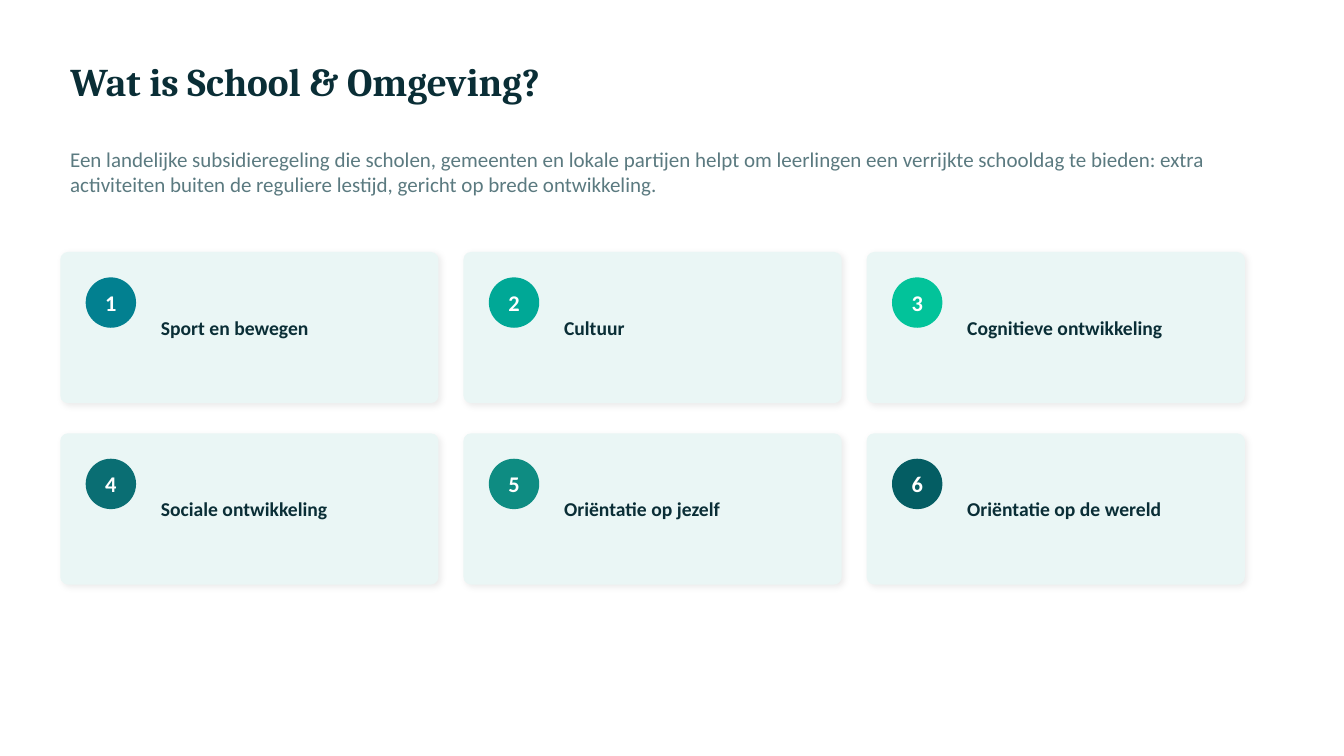
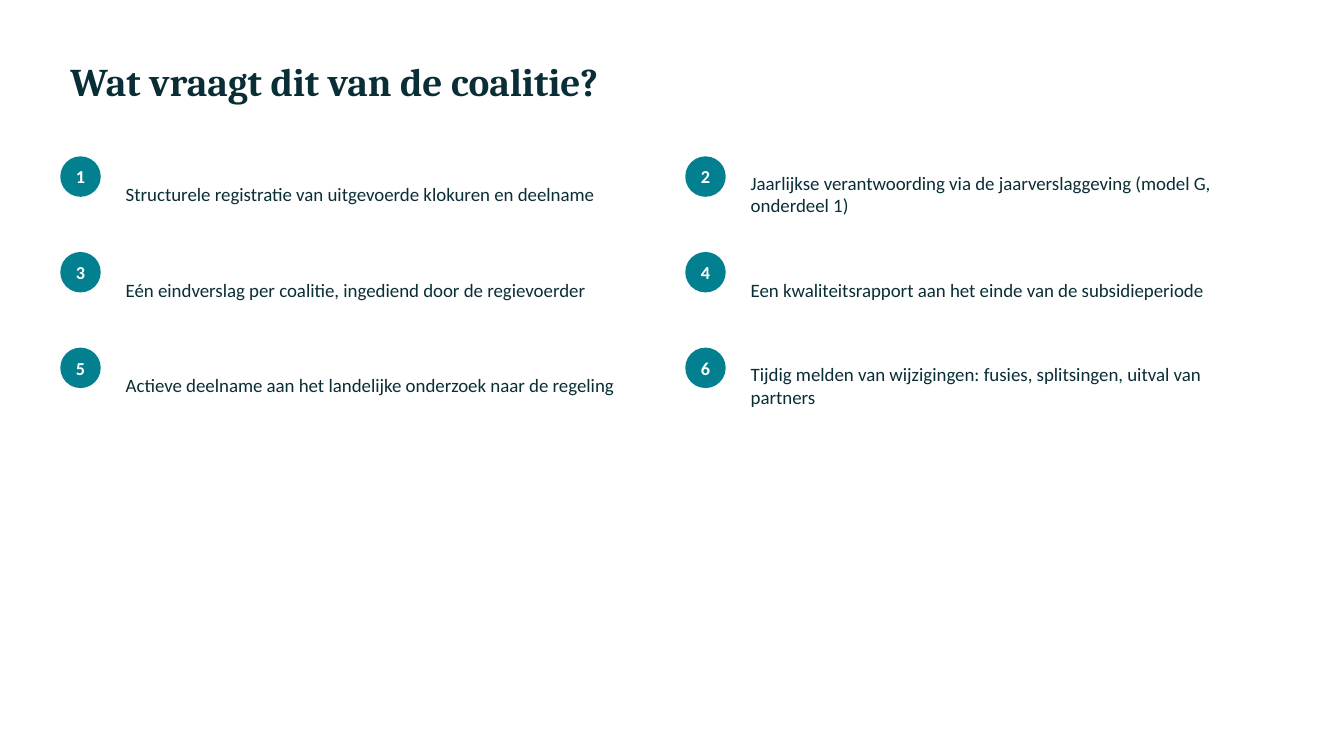
from dataclasses import dataclass

from lxml import etree
from pptx import Presentation
from pptx.dml.color import RGBColor
from pptx.enum.shapes import MSO_SHAPE as SHAPE
from pptx.enum.text import MSO_ANCHOR as ANCHOR, MSO_AUTO_SIZE as AUTO, PP_ALIGN as ALIGN
from pptx.oxml.ns import qn
from pptx.util import Cm, Pt


@dataclass(frozen=True)
class Theme:
    """Colours, fonts, type sizes and left margin of the deck."""
    ink: str = "0A2E36"
    muted: str = "5B7A80"
    card: str = "EAF6F5"
    accent: str = "028090"
    white: str = "FFFFFF"
    heading_font: str = "Cambria"
    body_font: str = "Calibri"
    title_size: float = 28
    intro_size: float = 15
    card_size: float = 14
    item_size: float = 13.5
    card_badge_size: float = 16
    item_badge_size: float = 13
    margin: float = 1.52


T = Theme()

THEMES = [
    ("Sport en bewegen", "028090"),
    ("Cultuur", "00A896"),
    ("Cognitieve ontwikkeling", "02C39A"),
    ("Sociale ontwikkeling", "0A6E73"),
    ("Oriëntatie op jezelf", "0E8C82"),
    ("Oriëntatie op de wereld", "045D63"),
]

TASKS = [
    "Structurele registratie van uitgevoerde klokuren en deelname",
    "Jaarlijkse verantwoording via de jaarverslaggeving (model G, onderdeel 1)",
    "Eén eindverslag per coalitie, ingediend door de regievoerder",
    "Een kwaliteitsrapport aan het einde van de subsidieperiode",
    "Actieve deelname aan het landelijke onderzoek naar de regeling",
    "Tijdig melden van wijzigingen: fusies, splitsingen, uitval van partners",
]


def write(sp, text, size, color=T.ink, bold=False, font=T.body_font, align=ALIGN.LEFT):
    """Put one vertically centred, styled paragraph in a shape."""
    tf = sp.text_frame
    tf.word_wrap = True
    tf.auto_size = AUTO.NONE
    tf.vertical_anchor = ANCHOR.MIDDLE
    p = tf.paragraphs[0]
    p.text = text
    p.alignment = align
    p.font.name = font
    p.font.size = Pt(size)
    p.font.bold = bold
    p.font.color.rgb = RGBColor.from_string(color)


def add_slide(prs, title):
    """Add a slide with the shared title style."""
    s = prs.slides.add_slide(prs.slide_layouts[5])
    sp = s.shapes.title
    sp.left, sp.top, sp.width, sp.height = Cm(T.margin), Cm(1.14), Cm(27.94), Cm(1.78)
    write(sp, title, T.title_size, bold=True, font=T.heading_font)
    return s


def add_text(s, text, x, y, w, h, size, color=T.ink):
    """Add a wrapping text box."""
    sp = s.shapes.add_textbox(Cm(x), Cm(y), Cm(w), Cm(h))
    write(sp, text, size, color)


def add_filled(s, kind, x, y, w, h, color):
    """Add a flat shape without outline or shadow."""
    sp = s.shapes.add_shape(kind, Cm(x), Cm(y), Cm(w), Cm(h))
    sp.shadow.inherit = False
    sp.fill.solid()
    sp.fill.fore_color.rgb = RGBColor.from_string(color)
    sp.line.fill.background()
    return sp


def add_badge(s, number, x, y, d, color, size):
    """Add a numbered circle."""
    sp = add_filled(s, SHAPE.OVAL, x, y, d, d, color)
    tf = sp.text_frame
    tf.margin_left = tf.margin_top = tf.margin_right = tf.margin_bottom = 0
    write(sp, str(number), size, T.white, bold=True, align=ALIGN.CENTER)


def add_soft_shadow(sp):
    """Give a shape a faint diagonal drop shadow."""
    effects = sp._element.spPr.find(qn("a:effectLst"))
    shadow = etree.SubElement(effects, qn("a:outerShdw"), blurRad=str(Pt(5)), dist=str(Pt(2)),
                              dir="2700000", algn="bl", rotWithShape="0")
    color = etree.SubElement(shadow, qn("a:srgbClr"), val="000000")
    etree.SubElement(color, qn("a:alpha"), val="8000")


def add_card(s, number, label, x, y, color):
    """Add a rounded card with a badge and a label."""
    sp = add_filled(s, SHAPE.ROUNDED_RECTANGLE, x, y, 9.53, 3.81, T.card)
    sp.adjustments[0] = 0.05
    add_soft_shadow(sp)
    sp.text_frame.margin_left = Cm(2.48)
    write(sp, label, T.card_size, bold=True)
    add_badge(s, number, x + 0.64, y + 0.64, 1.27, color, T.card_badge_size)


def add_item(s, number, text, x, y):
    """Add a numbered statement."""
    add_badge(s, number, x, y, 1.02, T.accent, T.item_badge_size)
    add_text(s, text, x + 1.4, y - 0.13, 12.83, 2.16, T.item_size)


def grid(count, columns, top, dx, dy):
    """Yield the corner of each cell, row by row."""
    for i in range(count):
        row, column = divmod(i, columns)
        yield T.margin + column * dx, top + row * dy


def build_overview(prs):
    """Build the slide that explains the scheme."""
    s = add_slide(prs, "Wat is School & Omgeving?")
    add_text(s, "Een landelijke subsidieregeling die scholen, gemeenten en lokale partijen helpt om "
             "leerlingen een verrijkte schooldag te bieden: extra activiteiten buiten de reguliere "
             "lestijd, gericht op brede ontwikkeling.",
             T.margin, 3.18, 30.23, 2.29, T.intro_size, T.muted)
    cells = grid(len(THEMES), 3, 6.35, 10.16, 4.57)
    for n, ((label, color), (x, y)) in enumerate(zip(THEMES, cells), 1):
        add_card(s, n, label, x, y, color)


def build_tasks(prs):
    """Build the slide with the coalition's tasks."""
    s = add_slide(prs, "Wat vraagt dit van de coalitie?")
    cells = grid(len(TASKS), 2, 3.94, 15.75, 2.41)
    for n, (text, (x, y)) in enumerate(zip(TASKS, cells), 1):
        add_item(s, n, text, x, y)


def main():
    """Build and save the deck."""
    prs = Presentation()
    prs.slide_width, prs.slide_height = Cm(33.87), Cm(19.05)
    build_overview(prs)
    build_tasks(prs)
    prs.save("out.pptx")


if __name__ == "__main__":
    main()
